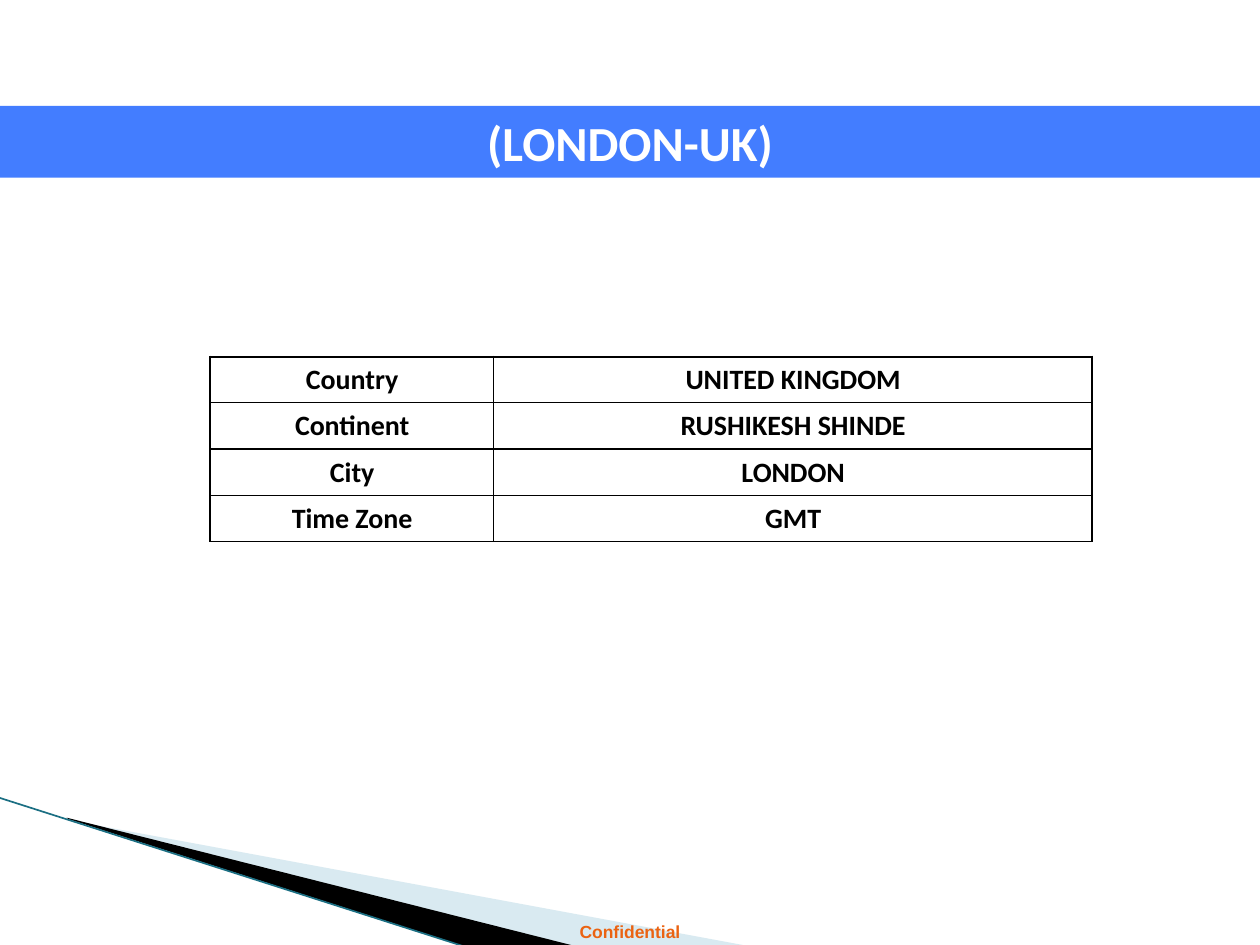
from lxml import etree
from pptx import Presentation
from pptx.dml.color import RGBColor
from pptx.enum.shapes import MSO_CONNECTOR
from pptx.enum.text import MSO_ANCHOR, PP_ALIGN
from pptx.oxml.ns import qn
from pptx.util import Inches, Pt

STRAIGHT = MSO_CONNECTOR.STRAIGHT
MIDDLE = MSO_ANCHOR.MIDDLE
CENTER = PP_ALIGN.CENTER

TITLE = "(LONDON-UK)"
FOOTER = "Confidential"
FACTS = [
    ("Country", "UNITED KINGDOM"),
    ("Continent", "RUSHIKESH SHINDE"),
    ("City", "LONDON"),
    ("Time Zone", "GMT"),
]
COLUMN_WIDTHS = (2.25, 4.75)
ROW_HEIGHT = 0.36

THEME = {
    "band": "437DFF",
    "pale": "A0CBDC",
    "dark": "000000",
    "edge": "1B6F83",
    "border": "000000",
    "outer": 1.25,
    "inner": 0.75,
    "title": {"name": "Calibri", "size": 28, "color": "FFFFFF"},
    "cell": {"name": "Calibri", "size": 16, "color": "000000"},
    "footer": {"name": "Arial", "size": 10, "color": "EB6312"},
}
WEDGES = [
    ("pale", 40, [(0.55, 6.51), (5.95, 7.51), (4.56, 7.51), (0.55, 6.5)]),
    ("dark", 100, [(0.53, 6.49), (4.57, 7.51), (3.72, 7.52), (0.54, 6.5)]),
]
EDGE = ((-0.01, 6.33), (3.71, 7.52))


def write(frame, text, style):
    frame.word_wrap = True
    paragraph = frame.paragraphs[0]
    paragraph.alignment = CENTER
    run = paragraph.add_run()
    run.text = text
    formats = {"name": style["name"], "size": Pt(style["size"]), "bold": True}
    for attribute, value in formats.items():
        setattr(run.font, attribute, value)
    run.font.color.rgb = RGBColor.from_string(style["color"])


def fill(target, color):
    target.fill.solid()
    target.fill.fore_color.rgb = RGBColor.from_string(color)


def add_wedge(slide, color, opacity, points):
    start, *corners = [(Inches(x), Inches(y)) for x, y in points]
    builder = slide.shapes.build_freeform(*start)
    builder.add_line_segments(corners, close=True)
    shape = builder.convert_to_shape()
    shape.shadow.inherit = False
    shape.line.fill.background()
    fill(shape, THEME[color])
    if opacity < 100:
        tone = shape.fill._xPr.find(qn("a:solidFill"))[0]
        etree.SubElement(tone, qn("a:alpha"), val=str(opacity * 1000))


def add_edge(slide):
    (x1, y1), (x2, y2) = EDGE
    line = slide.shapes.add_connector(
        STRAIGHT, Inches(x1), Inches(y1), Inches(x2), Inches(y2))
    line.line.color.rgb = RGBColor.from_string(THEME["edge"])
    line.line.width = Pt(0.95)
    etree.SubElement(line._element.spPr, qn("a:effectLst"))


def set_borders(cell, widths):
    properties = cell._tc.get_or_add_tcPr()
    for index, (side, width) in enumerate(widths.items()):
        line = etree.Element(qn(f"a:ln{side}"), w=str(Pt(width)))
        solid = etree.SubElement(line, qn("a:solidFill"))
        etree.SubElement(solid, qn("a:srgbClr"), val=THEME["border"])
        properties.insert(index, line)


def add_facts(slide):
    count, columns = len(FACTS), len(COLUMN_WIDTHS)
    table = slide.shapes.add_table(
        count, columns, Inches(1.67), Inches(2.83),
        Inches(sum(COLUMN_WIDTHS)), Inches(ROW_HEIGHT * count)).table
    table.first_row = table.horz_banding = False
    for column, width in zip(table.columns, COLUMN_WIDTHS):
        column.width = Inches(width)
    outer, inner = THEME["outer"], THEME["inner"]
    for row, texts in enumerate(FACTS):
        table.rows[row].height = Inches(ROW_HEIGHT)
        for column, text in enumerate(texts):
            cell = table.cell(row, column)
            cell.vertical_anchor = MIDDLE
            cell.fill.background()
            write(cell.text_frame, text, THEME["cell"])
            set_borders(cell, {
                "L": outer if column == 0 else inner,
                "R": outer if column == columns - 1 else inner,
                "T": outer if row == 0 else inner,
                "B": outer if row == count - 1 else inner,
            })


def main():
    presentation = Presentation()
    presentation.slide_width = Inches(10)
    presentation.slide_height = Inches(7.5)
    slide = presentation.slides.add_slide(presentation.slide_layouts[5])

    for wedge in WEDGES:
        add_wedge(slide, *wedge)
    add_edge(slide)

    footer = slide.shapes.add_textbox(0, Inches(7.26), Inches(10), Inches(0.27))
    write(footer.text_frame, FOOTER, THEME["footer"])

    title = slide.shapes.title
    place = {"left": 0, "top": Inches(0.84), "width": Inches(10), "height": Inches(0.57)}
    for attribute, value in place.items():
        setattr(title, attribute, value)
    fill(title, THEME["band"])
    title.text_frame.vertical_anchor = MIDDLE
    write(title.text_frame, TITLE, THEME["title"])

    add_facts(slide)
    presentation.save("out.pptx")


if __name__ == "__main__":
    main()
